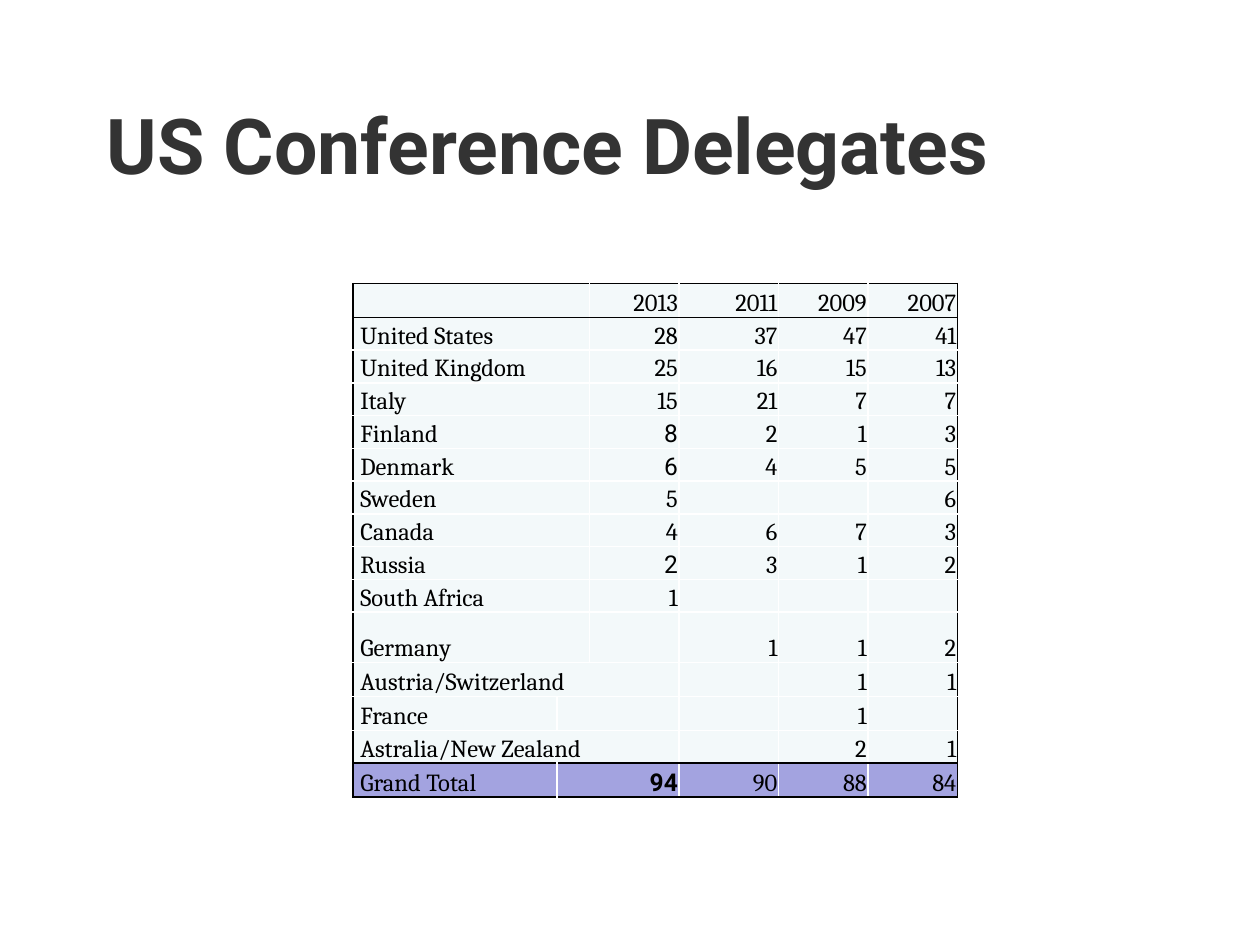
"""Build a slide with a table of US conference delegates by country and year."""
from lxml import etree
from pptx import Presentation
from pptx.dml.color import RGBColor
from pptx.enum.text import MSO_ANCHOR, PP_ALIGN
from pptx.oxml.ns import qn
from pptx.util import Inches, Pt

TOP, LOW = MSO_ANCHOR.TOP, MSO_ANCHOR.BOTTOM
LEFT, RIGHT = PP_ALIGN.LEFT, PP_ALIGN.RIGHT

TITLE = "US Conference Delegates"
ROWS = [
    ("", 2013, 2011, 2009, 2007),
    ("United States", 28, 37, 47, 41),
    ("United Kingdom", 25, 16, 15, 13),
    ("Italy", 15, 21, 7, 7),
    ("Finland", 8, 2, 1, 3),
    ("Denmark", 6, 4, 5, 5),
    ("Sweden", 5, "", "", 6),
    ("Canada", 4, 6, 7, 3),
    ("Russia", 2, 3, 1, 2),
    ("South Africa", 1, "", "", ""),
    ("Germany", "", 1, 1, 2),
    ("Austria/Switzerland", "", "", 1, 1),
    ("France", "", "", 1, ""),
    ("Astralia/New Zealand", "", "", 2, 1),
    ("Grand Total", 94, 90, 88, 84),
]
WIDE = {"Austria/Switzerland", "Astralia/New Zealand"}
SPLIT = {"France", "Grand Total"}
SANS = {"Finland", "Denmark", "Russia", "Grand Total"}
WIDTHS = [1.62, 0.26, 0.71, 0.79, 0.71, 0.71]
HEIGHTS = [0.27] + [0.26] * 9 + [0.4, 0.27, 0.27, 0.26, 0.27]
COLORS = {"title": "333333", "text": "000000", "body": "F3F9FA",
          "total": "A3A3E0", "rule": "000000", "grid": "FFFFFF"}
HEAD = {"name": "Roboto", "size": Pt(44), "bold": True}
BODY = {"name": "Cambria", "size": Pt(14), "bold": False}


def style(item, form):
    for key, val in form.items():
        setattr(item, key, val)


def write(para, text, form, color):
    run = para.add_run()
    run.text = text
    style(run.font, form)
    run.font.color.rgb = RGBColor.from_string(COLORS[color])


def border(cell, sides):
    props = cell._tc.get_or_add_tcPr()
    for spot, (side, dark) in enumerate(sides.items()):
        line = etree.Element(qn(f"a:ln{side}"), w=str(Pt(1)))
        fill = etree.SubElement(line, qn("a:solidFill"))
        etree.SubElement(fill, qn("a:srgbClr"), val=COLORS["rule" if dark else "grid"])
        props.insert(spot, line)


def fill_cell(cell, row, col, text, form):
    last = len(ROWS) - 1
    style(cell, {"vertical_anchor": LOW, "margin_left": Inches(0.01 if col else 0.06),
                 "margin_right": Inches(0.01), "margin_top": Inches(0.01),
                 "margin_bottom": 0})
    cell.fill.solid()
    cell.fill.fore_color.rgb = RGBColor.from_string(COLORS["total" if row == last else "body"])
    border(cell, {"L": col == 0, "R": col == len(WIDTHS) - 1,
                  "T": row in (0, 1, last), "B": row in (0, last - 1, last)})
    para = cell.text_frame.paragraphs[0]
    para.alignment = RIGHT if col else LEFT
    if text:
        write(para, text, form, "text")
    else:
        etree.SubElement(para._p, qn("a:endParaRPr"), sz="1400")


def add_title(slide):
    box = slide.shapes.add_textbox(*map(Inches, (0.75, 0.67, 8.5, 1.25)))
    frame = box.text_frame
    style(frame, {"word_wrap": True, "vertical_anchor": TOP, "margin_top": Inches(0.1)})
    write(frame.paragraphs[0], TITLE, HEAD, "title")


def add_grid(slide):
    size = sum(WIDTHS), sum(HEIGHTS)
    table = slide.shapes.add_table(len(ROWS), len(WIDTHS),
                                   *map(Inches, (2.8, 2.25, *size))).table
    style(table, {"first_row": False, "horz_banding": False})
    for col, width in zip(table.columns, WIDTHS):
        col.width = Inches(width)
    for row, (name, *vals) in enumerate(ROWS):
        table.rows[row].height = Inches(HEIGHTS[row])
        start, end = (0, 2) if name in WIDE else (1, 2) if name in SPLIT else (0, 1)
        texts = [name, "", *map(str, vals)]
        if name in SPLIT:
            texts[1], texts[2] = texts[2], ""
        first = 1 if name in SPLIT else 2
        for col, text in enumerate(texts):
            form = dict(BODY)
            if col == first and name in SANS:
                form.update(name="Roboto", bold=name == "Grand Total")
            fill_cell(table.cell(row, col), row, col, text, form)
        table.cell(row, start).merge(table.cell(row, end))


def main():
    deck = Presentation()
    style(deck, {"slide_width": Inches(10), "slide_height": Inches(7.5)})
    slide = deck.slides.add_slide(deck.slide_layouts[6])
    add_title(slide)
    add_grid(slide)
    deck.save("out.pptx")


if __name__ == "__main__":
    main()
